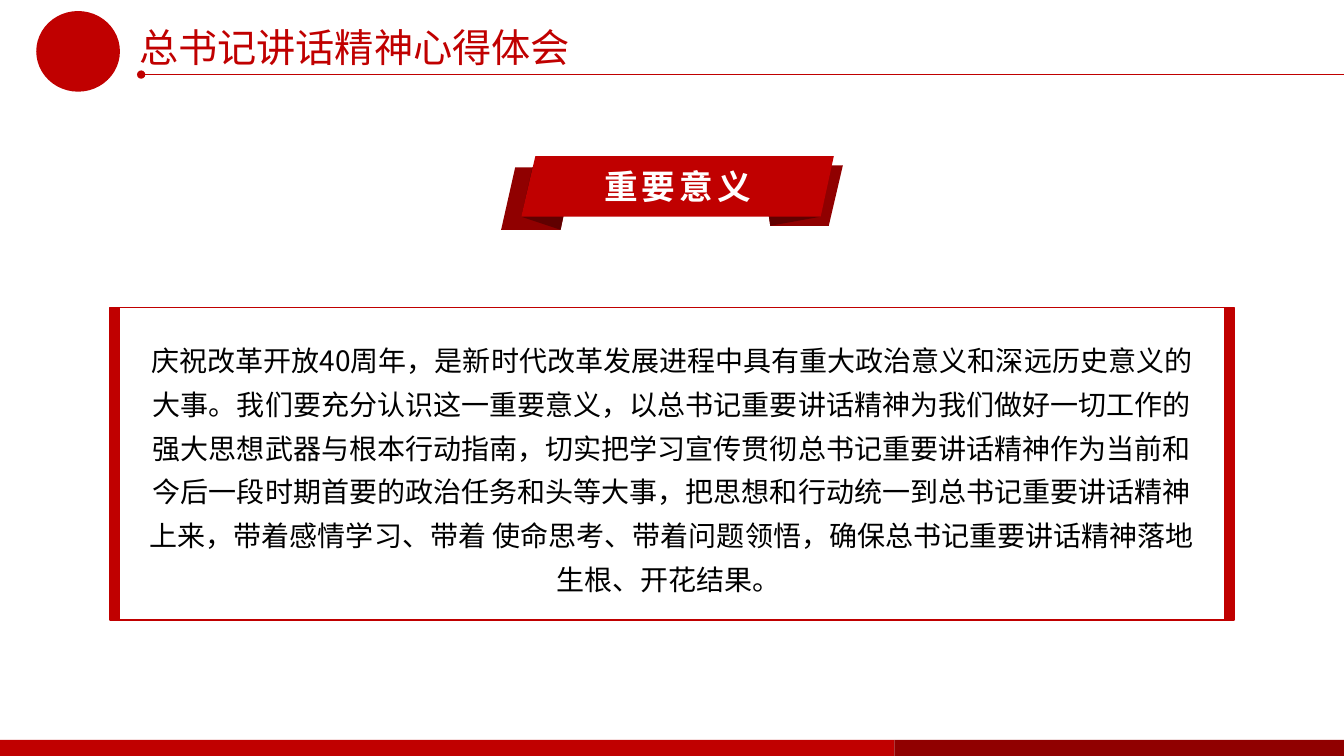
from dataclasses import dataclass
from typing import Optional

import pptx
import pptx.dml.color
import pptx.enum.shapes
import pptx.enum.text
import pptx.oxml
import pptx.oxml.ns
import pptx.util
from pptx.util import Inches

ALIGN = pptx.enum.text.PP_ALIGN
ANCHOR = pptx.enum.text.MSO_ANCHOR
KIND = pptx.enum.shapes.MSO_SHAPE


@dataclass(frozen=True)
class Theme:
    red: str = "C00000"
    dark: str = "900000"
    fold: str = "600000"
    white: str = "FFFFFF"
    black: str = "000000"
    cjk: str = "Noto Sans CJK SC"
    latin: str = "Arial"
    title: int = 28
    label: int = 24
    body: int = 20
    line: int = 1


@dataclass(frozen=True)
class Area:
    left: float
    top: float
    width: float
    height: float

    def lengths(self) -> tuple:
        return tuple(map(Inches, (self.left, self.top, self.width, self.height)))


@dataclass(frozen=True)
class Block:
    area: Area
    fill: Optional[str] = None
    line: Optional[str] = None
    kind: KIND = KIND.RECTANGLE


@dataclass(frozen=True)
class Face:
    fill: str
    points: tuple


@dataclass(frozen=True)
class Style:
    font: str
    size: int
    color: str
    align: ALIGN
    bold: bool = False
    spread: float = 1.0
    track: int = 0


THEME = Theme()
HEAD = Style(THEME.cjk, THEME.title, THEME.red, ALIGN.LEFT)
LABEL = Style(THEME.latin, THEME.label, THEME.white, ALIGN.CENTER, bold=True, track=3)
BODY = Style(THEME.cjk, THEME.body, THEME.black, ALIGN.CENTER, spread=1.3)

WIDE, HIGH = 13.33, 7.5
FOOT, SPLIT = 7.34, 8.87
LEFT, TOP, TALL, BAR, INNER = 1.09, 3.05, 3.1, 0.09, 10.97

BLOCKS = (
    Block(Area(0.36, 0.11, 0.83, 0.8), THEME.red, kind=KIND.OVAL),
    Block(Area(0, FOOT, SPLIT, HIGH - FOOT), THEME.red),
    Block(Area(SPLIT, FOOT, WIDE - SPLIT, HIGH - FOOT), THEME.dark),
    Block(Area(LEFT, TOP, BAR, TALL), THEME.red, THEME.red),
    Block(Area(LEFT + BAR, TOP, INNER, TALL), None, THEME.red),
    Block(Area(LEFT + BAR + INNER, TOP, BAR, TALL), THEME.red, THEME.red),
)

RIBBON = (
    Face(THEME.dark, ((4.97, 2.28), (5.56, 2.28), (5.69, 1.66), (5.11, 1.66))),
    Face(THEME.fold, ((5.17, 2.15), (5.56, 2.28), (5.69, 1.66), (5.28, 1.66))),
    Face(THEME.dark, ((7.64, 2.24), (8.22, 2.24), (8.36, 1.64), (7.55, 1.64))),
    Face(THEME.fold, ((8.14, 2.15), (7.64, 2.24), (7.55, 1.64))),
    Face(THEME.red, ((5.17, 2.15), (8.14, 2.15), (8.27, 1.55), (5.31, 1.55))),
)

TITLE = "总书记讲话精神心得体会"
TEXT = (
    "庆祝改革开放40周年，是新时代改革发展进程中具有重大政治意义和深远历史意义的大事。"
    "我们要充分认识这一重要意义，以总书记重要讲话精神为我们做好一切工作的强大思想武器与根本行动指南，"
    "切实把学习宣传贯彻总书记重要讲话精神作为当前和今后一段时期首要的政治任务和头等大事，"
    "把思想和行动统一到总书记重要讲话精神上来，带着感情学习、带着 使命思考、带着问题领悟，"
    "确保总书记重要讲话精神落地生根、开花结果。 "
)


def shade(value: str) -> pptx.dml.color.RGBColor:
    return pptx.dml.color.RGBColor.from_string(value)


def add_tag(parent, tag: str, **values: str) -> None:
    node = pptx.oxml.parse_xml(f"<{tag} {pptx.oxml.ns.nsdecls('a')}/>")
    for key, value in values.items():
        node.set(key, value)
    parent.append(node)


def paint(shape, fill: Optional[str], line: Optional[str] = None) -> None:
    shape.shadow.inherit = False
    if fill:
        shape.fill.solid()
        shape.fill.fore_color.rgb = shade(fill)
    else:
        shape.fill.background()
    if line:
        shape.line.color.rgb = shade(line)
        shape.line.width = pptx.util.Pt(THEME.line)
    else:
        shape.line.fill.background()


def draw_block(shapes, block: Block) -> None:
    shape = shapes.add_shape(block.kind, *block.area.lengths())
    paint(shape, block.fill, block.line)


def draw_face(shapes, face: Face) -> None:
    first, *rest = [(Inches(x), Inches(y)) for x, y in face.points]
    pen = shapes.build_freeform(*first)
    pen.add_line_segments(rest, close=True)
    paint(pen.convert_to_shape(), face.fill)


def draw_rule(shapes) -> None:
    """Draw the line under the title, with a dot at its left end."""
    rule = shapes.add_connector(
        pptx.enum.shapes.MSO_CONNECTOR.STRAIGHT,
        Inches(1.4), Inches(0.74), Inches(WIDE), Inches(0.74),
    )
    rule.line.color.rgb = shade(THEME.red)
    rule.line.width = pptx.util.Pt(THEME.line)
    props = rule.element.spPr
    add_tag(props.find(pptx.oxml.ns.qn("a:ln")), "a:headEnd", type="oval")
    add_tag(props, "a:effectLst")


def write(shape, area: Area, text: str, style: Style, anchor: ANCHOR = ANCHOR.TOP) -> None:
    shape.left, shape.top, shape.width, shape.height = area.lengths()
    frame = shape.text_frame
    frame.text = text
    frame.word_wrap = True
    frame.auto_size = pptx.enum.text.MSO_AUTO_SIZE.NONE
    frame.vertical_anchor = anchor
    para = frame.paragraphs[0]
    para.alignment = style.align
    para.line_spacing = style.spread
    para.space_before = pptx.util.Pt(0)
    props = para._p.get_or_add_pPr()
    props.set("marL", "0")
    props.set("indent", "0")
    add_tag(props, "a:buNone")
    font = para.font
    font.name = style.font
    font.size = pptx.util.Pt(style.size)
    font.bold = style.bold
    font.color.rgb = shade(style.color)
    marks = props.find(pptx.oxml.ns.qn("a:defRPr"))
    add_tag(marks, "a:ea", typeface=THEME.cjk)
    if style.track:
        marks.set("spc", str(style.track * 100))


def main() -> None:
    deck = pptx.Presentation()
    deck.slide_width, deck.slide_height = Inches(WIDE), Inches(HIGH)
    slide = deck.slides.add_slide(deck.slide_layouts[1])
    shapes = slide.shapes
    write(shapes.title, Area(1.28, 0.18, 4.72, 0.57), TITLE, HEAD)
    write(slide.placeholders[1], Area(1.31, 3.26, 10.71, 2.68), TEXT, BODY)
    draw_rule(shapes)
    for block in BLOCKS:
        draw_block(shapes, block)
    for face in RIBBON:
        draw_face(shapes, face)
    spot = Area(5.76, 1.6, 1.92, 0.5)
    write(shapes.add_textbox(*spot.lengths()), spot, "重要意义", LABEL, ANCHOR.MIDDLE)
    deck.save("out.pptx")


if __name__ == "__main__":
    main()
